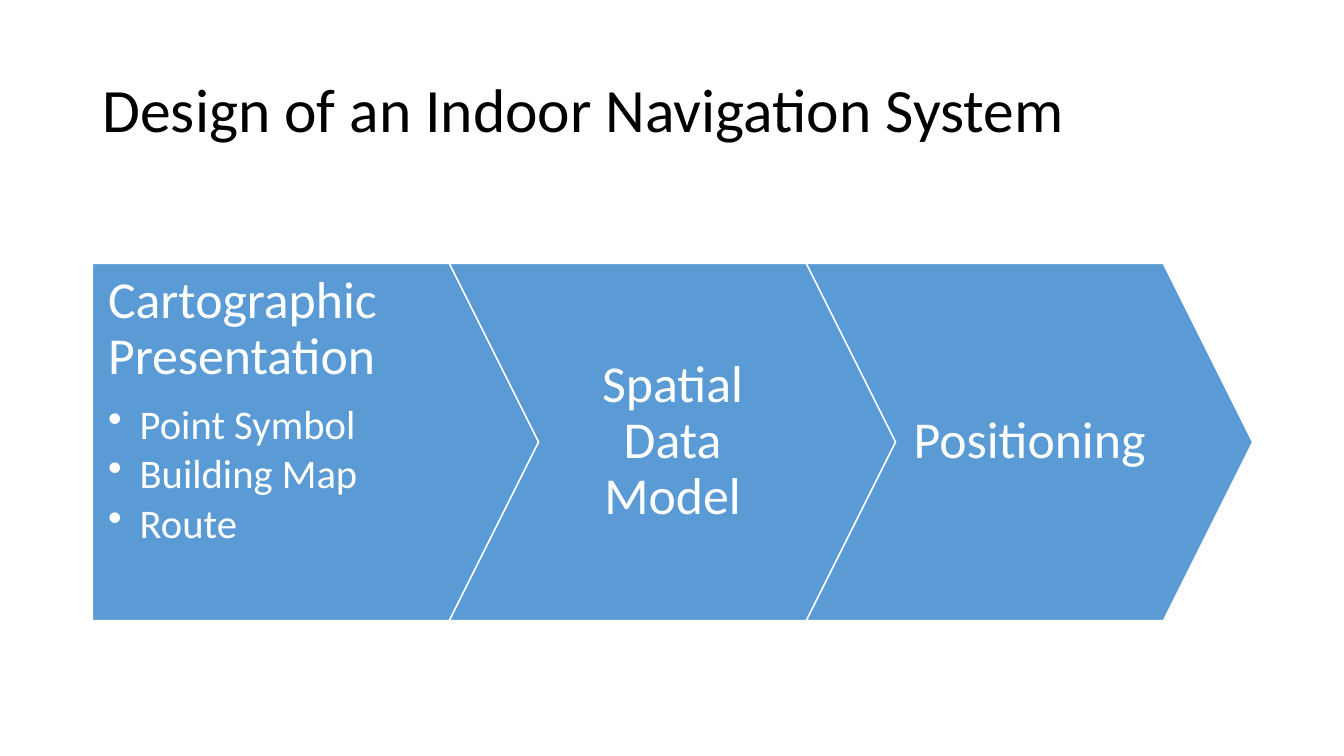
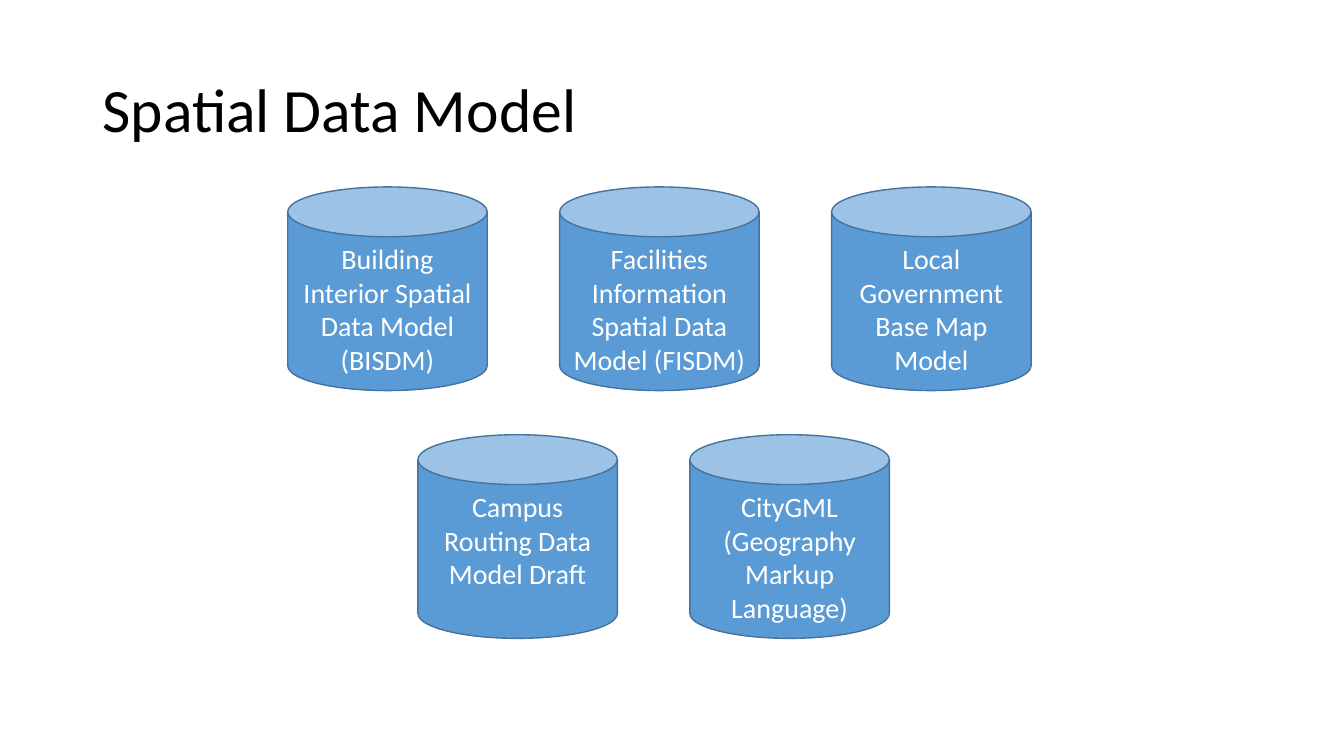
import pptx
import pptx.util
import pptx.dml.color
import pptx.enum.shapes
import pptx.enum.text
import pptx.oxml.ns
import lxml.etree

PX = 9525  # EMU per px, 96 px to the inch
FONT = "Calibri"
BLACK, WHITE, BLUE, DARK_BLUE = "000000", "FFFFFF", "5B9BD5", "43739E"
SHAPE = pptx.enum.shapes.MSO_SHAPE
ALIGN = pptx.enum.text.PP_ALIGN
ANCHOR = pptx.enum.text.MSO_ANCHOR

STAGES = [
    ("Cartographic Presentation", ["Point Symbol", "Building Map", "Route"]),
    ("Spatial Data Model", []),
    ("Positioning", []),
]
# Each row: left edge, top edge, labels
MODEL_ROWS = [
    (274, 178, ["Building Interior Spatial Data Model\n(BISDM)",
                "Facilities Information Spatial Data Model (FISDM)",
                "Local Government Base Map Model"]),
    (398, 414, ["Campus Routing Data Model Draft",
                "CityGML\n(Geography Markup Language)"]),
]


def px(n):
    return pptx.util.Emu(round(n * PX))


def rgb(color):
    return pptx.dml.color.RGBColor.from_string(color)


def format_paragraph(p, size, color, align, spacing=None, after=0):
    p.alignment = align
    p.line_spacing = spacing
    p.space_after = pptx.util.Pt(after)
    for r in p.runs:
        r.font.name = FONT
        r.font.size = pptx.util.Pt(size)
        r.font.color.rgb = rgb(color)


def add_bullet(p, indent):
    pPr = p._p.get_or_add_pPr()
    pPr.set("marL", str(px(indent)))
    pPr.set("indent", str(-px(indent)))
    bullet = lxml.etree.SubElement(pPr, pptx.oxml.ns.qn("a:buChar"))
    bullet.set("char", "•")


def add_filled_shape(slide, kind, box, line):
    sp = slide.shapes.add_shape(kind, *map(px, box))
    sp.shadow.inherit = False
    sp.fill.solid()
    sp.fill.fore_color.rgb = rgb(BLUE)
    sp.line.color.rgb = rgb(line)
    sp.line.width = pptx.util.Pt(1)
    sp.text_frame.word_wrap = True
    return sp


def add_titled_slide(prs, title):
    slide = prs.slides.add_slide(prs.slide_layouts[5])
    sp = slide.shapes.title
    sp.left, sp.top, sp.width, sp.height = map(px, (88, 38, 1104, 139))
    tf = sp.text_frame
    tf.text = title
    tf.auto_size = pptx.enum.text.MSO_AUTO_SIZE.NONE
    tf.vertical_anchor = ANCHOR.MIDDLE
    format_paragraph(tf.paragraphs[0], 44, BLACK, ALIGN.LEFT, 0.9)
    return slide


def add_stage(slide, kind, box, heading, items):
    """One arrow; a stage with items is set from the top left."""
    sp = add_filled_shape(slide, kind, box, WHITE)
    sp.adjustments[0] = 0.25
    tf = sp.text_frame
    tf.margin_left = px(15)
    tf.margin_right = px(60 if items else 15)
    tf.margin_top = tf.margin_bottom = px(10)
    tf.vertical_anchor = ANCHOR.TOP if items else ANCHOR.MIDDLE
    tf.text = heading
    align = ALIGN.LEFT if items else ALIGN.CENTER
    format_paragraph(tf.paragraphs[0], 37, WHITE, align, 0.9, 13)
    for item in items:
        p = tf.add_paragraph()
        p.text = item
        p.level = 1
        format_paragraph(p, 29, WHITE, ALIGN.LEFT, 0.9, 4)
        add_bullet(p, 30)


def add_process(slide, box, stages):
    """Interlocking arrows, each point reaching into the next notch."""
    x, y, w, h = box
    tip = h // 4
    step = (w - tip) // len(stages)
    for i, (heading, items) in enumerate(stages):
        kind = SHAPE.CHEVRON if i else SHAPE.PENTAGON
        add_stage(slide, kind, (x + i * step, y, step + tip, h), heading, items)


def add_model_row(slide, x, y, labels):
    """Evenly spaced cylinders."""
    width, height, gap = 190, 194, 69
    for i, label in enumerate(labels):
        box = (x + i * (width + gap), y, width, height)
        sp = add_filled_shape(slide, SHAPE.CAN, box, DARK_BLUE)
        tf = sp.text_frame
        tf.vertical_anchor = ANCHOR.TOP
        tf.text = label
        for p in tf.paragraphs:
            format_paragraph(p, 20, WHITE, ALIGN.CENTER)


def main():
    prs = pptx.Presentation()
    prs.slide_width, prs.slide_height = px(1280), px(720)

    # Design process
    slide = add_titled_slide(prs, "Design of an Indoor Navigation System")
    add_process(slide, (88, 251, 1105, 340), STAGES)

    # Data models
    slide = add_titled_slide(prs, "Spatial Data Model")
    for x, y, labels in MODEL_ROWS:
        add_model_row(slide, x, y, labels)

    prs.save("out.pptx")


if __name__ == "__main__":
    main()
